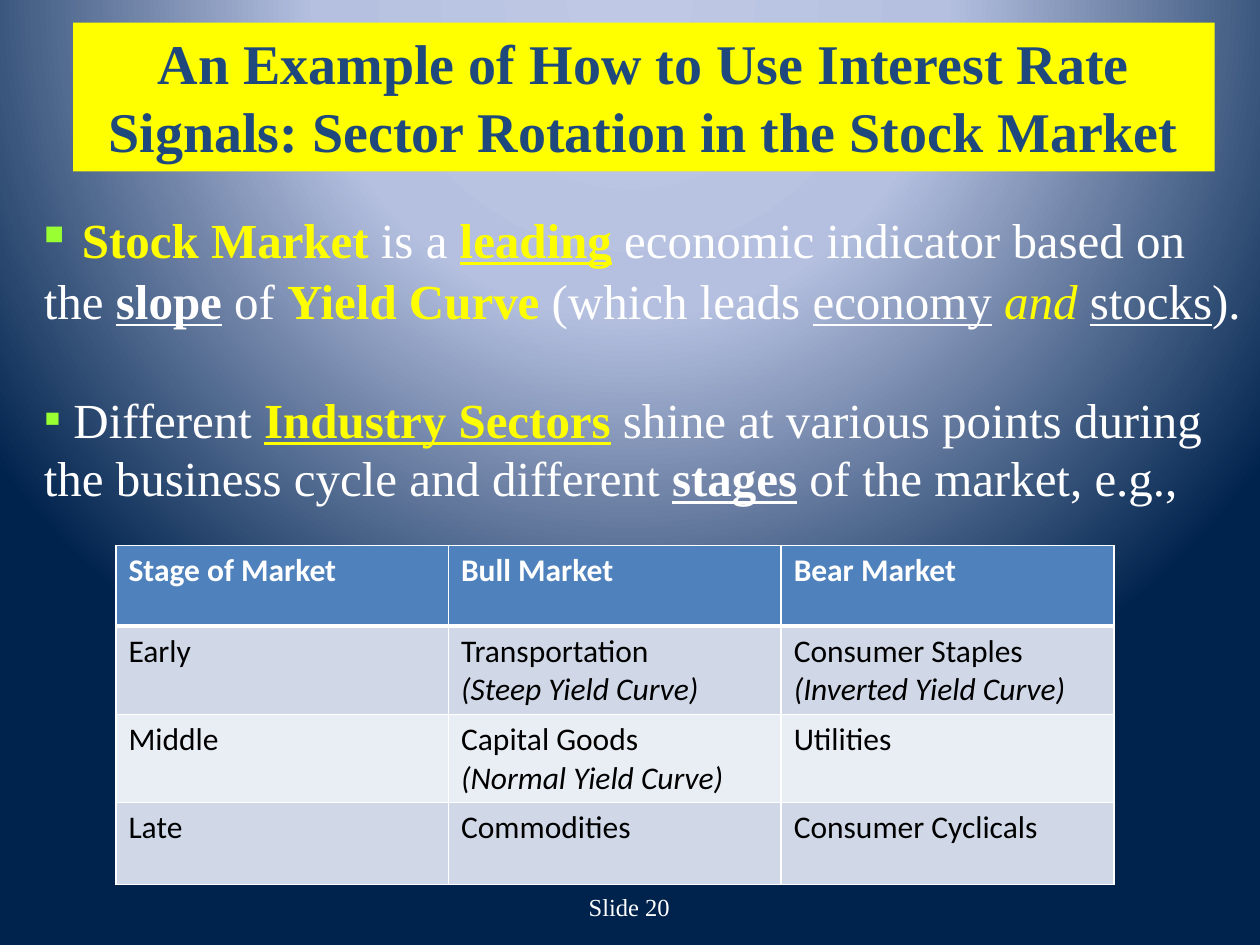
from dataclasses import dataclass

import pptx
import pptx.dml.color
import pptx.enum.text
import pptx.oxml
import pptx.oxml.ns
import pptx.util
from lxml import etree
from pptx.util import Inches

ALIGN = pptx.enum.text.PP_ALIGN
ANCHOR = pptx.enum.text.MSO_ANCHOR
AUTO_SIZE = pptx.enum.text.MSO_AUTO_SIZE
qn = pptx.oxml.ns.qn


@dataclass(frozen=True)
class Theme:
    serif: str = "Times New Roman"
    sans: str = "Calibri"
    white: str = "FFFFFF"
    black: str = "000000"
    yellow: str = "FFFF00"
    navy: str = "1F497D"
    bullet: str = "99FF33"
    header: str = "4F81BD"
    bands: tuple = ("D0D8E8", "E9EDF4")
    gradient: tuple = ((0, "BFC9E5"), (40, "B5C0E0"), (100, "00234D"))
    title_size: int = 32
    lead_size: int = 36
    body_size: int = 28
    table_size: int = 18
    footer_size: int = 14


THEME = Theme()
KEY = dict(color=THEME.yellow, bold=True)
KEY_LINE = dict(KEY, underline=True)
STRONG_LINE = dict(bold=True, underline=True)
ITALIC = dict(italic=True)

# Each bullet is a list of (text, format) runs
BULLETS = [
    [(" ", dict(size=THEME.lead_size)), ("Stock Market", KEY), (" is a ", {}),
     ("leading", KEY_LINE), (" economic indicator based on the ", {}),
     ("slope", STRONG_LINE), (" of ", {}), ("Yield Curve ", KEY),
     ("(which leads ", {}), ("economy", dict(underline=True)), (" ", {}),
     ("and ", dict(color=THEME.yellow, italic=True)),
     ("stocks", dict(underline=True)), (").", {})],
    [(" Different ", {}), ("Industry Sectors", KEY_LINE),
     (" shine at various points during the business cycle and different ", {}),
     ("stages", STRONG_LINE), (" of the market, e.g.,", {})],
]

# Each cell is a list of paragraphs, each paragraph a list of runs
STAGES = [
    [[[("Stage of Market", {})]], [[("Bull Market", {})]], [[("Bear Market", {})]]],
    [[[("Early", {})]],
     [[("Transportation", {})], [("(Steep Yield Curve)", ITALIC)]],
     [[("Consumer Staples ", {}), ("(Inverted Yield Curve)", ITALIC)]]],
    [[[("Middle", {})]],
     [[("Capital Goods", {})], [("(Normal Yield Curve)", ITALIC)]],
     [[("Utilities", {})]]],
    [[[("Late", {})]], [[("Commodities", {})]], [[("Consumer Cyclicals", {})]]],
]


def rgb(color):
    return pptx.dml.color.RGBColor.from_string(color)


def add_text(paragraph, text, *, size=THEME.body_size, font=THEME.serif,
             color=THEME.white, bold=False, italic=False, underline=False):
    run = paragraph.add_run()
    run.text = text
    run.font.size = pptx.util.Pt(size)
    run.font.name = font
    run.font.color.rgb = rgb(color)
    run.font.bold = bold
    run.font.italic = italic
    run.font.underline = underline


def set_background(slide):
    stops = "".join(f'<a:gs pos="{position * 1000}"><a:srgbClr val="{color}"/></a:gs>'
                    for position, color in THEME.gradient)
    background = pptx.oxml.parse_xml(
        f'<p:bg {pptx.oxml.ns.nsdecls("p", "a")}><p:bgPr>'
        f'<a:gradFill rotWithShape="1"><a:gsLst>{stops}</a:gsLst><a:path path="circle">'
        '<a:fillToRect l="50000" t="-80000" r="50000" b="180000"/></a:path></a:gradFill>'
        '<a:effectLst/></p:bgPr></p:bg>')
    slide.element.find(qn("p:cSld")).insert(0, background)


def add_title(slide, text):
    title = slide.shapes.title
    title.left, title.top = Inches(0.58), Inches(0.18)
    title.width, title.height = Inches(9.06), Inches(1.18)
    title.fill.solid()
    title.fill.fore_color.rgb = rgb(THEME.yellow)
    frame = title.text_frame
    frame.word_wrap = True
    frame.auto_size = AUTO_SIZE.SHAPE_TO_FIT_TEXT
    frame.vertical_anchor = ANCHOR.TOP
    paragraph = frame.paragraphs[0]
    paragraph.alignment = ALIGN.CENTER
    add_text(paragraph, text, size=THEME.title_size, color=THEME.navy, bold=True)


def add_text_frame(slide, left, top, width, height):
    box = slide.shapes.add_textbox(Inches(left), Inches(top), Inches(width), Inches(height))
    box.text_frame.word_wrap = True
    return box.text_frame


def set_bullet(paragraph):
    properties = paragraph._p.get_or_add_pPr()
    properties.set("marL", "0")
    properties.set("indent", "0")
    color = etree.SubElement(properties, qn("a:buClr"))
    etree.SubElement(color, qn("a:srgbClr"), val=THEME.bullet)
    etree.SubElement(properties, qn("a:buFont"), typeface=THEME.serif)
    etree.SubElement(properties, qn("a:buChar"), char="▪")


def add_bullets(slide):
    frame = add_text_frame(slide, 0.25, 1.5, 9.75, 3.06)
    for index, runs in enumerate(BULLETS):
        paragraph = frame.add_paragraph() if index else frame.paragraphs[0]
        set_bullet(paragraph)
        if index:
            paragraph.space_before = pptx.util.Pt(34)
        for text, style in runs:
            add_text(paragraph, text, **style)


def set_borders(cell, top, bottom):
    properties = cell._tc.get_or_add_tcPr()
    widths = {"a:lnL": 1, "a:lnR": 1, "a:lnT": top, "a:lnB": bottom}
    for tag, width in widths.items():
        line = etree.SubElement(properties, qn(tag), w=str(pptx.util.Pt(width)))
        fill = etree.SubElement(line, qn("a:solidFill"))
        etree.SubElement(fill, qn("a:srgbClr"), val=THEME.white)


def fill_cell(cell, paragraphs, row):
    is_header = row == 0
    set_borders(cell, top=3 if row == 1 else 1, bottom=3 if is_header else 1)
    cell.fill.solid()
    cell.fill.fore_color.rgb = rgb(THEME.header if is_header else THEME.bands[(row - 1) % 2])
    frame = cell.text_frame
    for index, runs in enumerate(paragraphs):
        paragraph = frame.add_paragraph() if index else frame.paragraphs[0]
        for text, style in runs:
            add_text(paragraph, text, size=THEME.table_size, font=THEME.sans, bold=is_header,
                     color=THEME.white if is_header else THEME.black, **style)


def add_stage_table(slide):
    table = slide.shapes.add_table(len(STAGES), len(STAGES[0]), Inches(0.92), Inches(4.33),
                                   Inches(7.92), Inches(2.59)).table
    for row, cells in enumerate(STAGES):
        table.rows[row].height = Inches(0.65 if row else 0.64)
        for column, paragraphs in enumerate(cells):
            fill_cell(table.cell(row, column), paragraphs, row)


def add_slide_label(slide, text):
    frame = add_text_frame(slide, 3.83, 7, 2.33, 0.4)
    frame.vertical_anchor = ANCHOR.MIDDLE
    frame.paragraphs[0].alignment = ALIGN.CENTER
    add_text(frame.paragraphs[0], text, size=THEME.footer_size)


def main():
    presentation = pptx.Presentation()
    presentation.slide_width, presentation.slide_height = Inches(10), Inches(7.5)
    slide = presentation.slides.add_slide(presentation.slide_layouts[5])
    set_background(slide)
    add_slide_label(slide, "Slide 20")
    add_bullets(slide)
    add_title(slide, "An Example of How to Use Interest Rate Signals: "
                     "Sector Rotation in the Stock Market")
    add_stage_table(slide)
    presentation.save("out.pptx")


if __name__ == "__main__":
    main()
